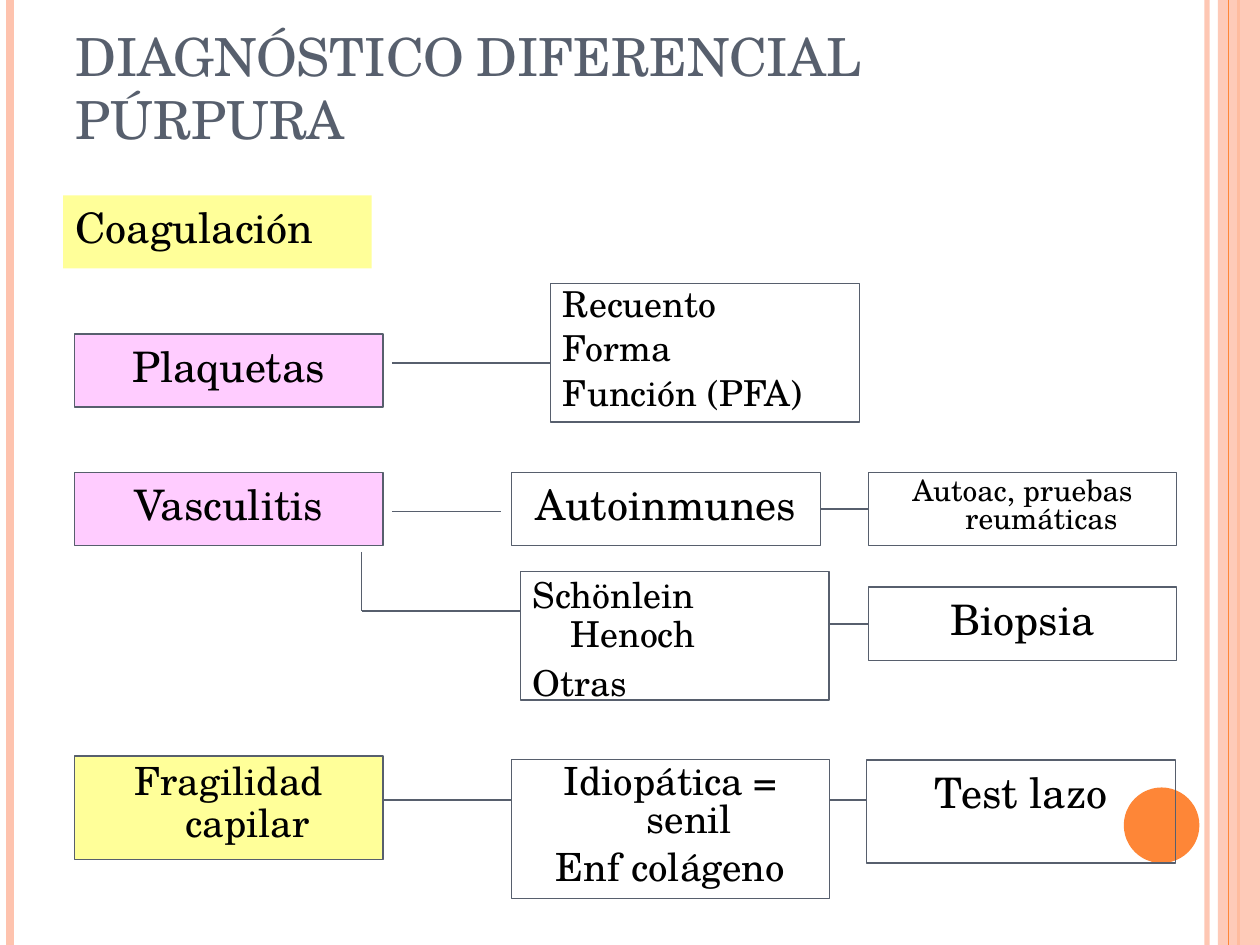
import pptx
import pptx.dml.color
import pptx.enum.shapes
import pptx.enum.text
import pptx.oxml.ns
import pptx.util
from lxml import etree

Pt = pptx.util.Pt
RGBColor = pptx.dml.color.RGBColor
Align = pptx.enum.text.PP_ALIGN
Anchor = pptx.enum.text.MSO_ANCHOR
Shape = pptx.enum.shapes.MSO_SHAPE
qn = pptx.oxml.ns.qn

SLATE = RGBColor(0x57, 0x5F, 0x6D)
BLACK = RGBColor(0, 0, 0)
YELLOW = RGBColor(0xFF, 0xFF, 0x99)
PINK = RGBColor(0xFF, 0xCC, 0xFF)
PEACH = RGBColor(0xFE, 0xC3, 0xAE)
ORANGE = RGBColor(0xFE, 0x86, 0x37)

WIDTH, HEIGHT = 720, 540
BOX_WIDTH, BOX_HEIGHT, TALL_HEIGHT = 176.4, 41.8, 59
LEFT, MIDDLE, RIGHT = 42.5, 292.3, 496.1
VASCULITIS_TOP, FRAGILITY_TOP = 270, 434.2
LEFT_SIDE, RIGHT_SIDE = 1, 3


class Diagram:
    font = "TeX Gyre Schola"
    indent = 21.6
    space_before = 6

    def __init__(self, slide):
        self.slide = slide

    def place(self, shape, left, top, width, height):
        shape.left, shape.top = Pt(left), Pt(top)
        shape.width, shape.height = Pt(width), Pt(height)

    def add_run(self, paragraph, text, size, color):
        run = paragraph.add_run()
        run.text = text
        run.font.name = self.font
        run.font.size = Pt(size)
        run.font.color.rgb = color
        return run

    def set_opacity(self, fill_parent, percent):
        color = fill_parent.find(".//" + qn("a:srgbClr"))
        etree.SubElement(color, qn("a:alpha"), val=str(percent * 1000))

    def add_lines(self, shape, lines, size, align, spacing):
        """Fill a shape with paragraphs that share a hanging indent."""
        frame = shape.text_frame
        frame.word_wrap = True
        frame.auto_size = pptx.enum.text.MSO_AUTO_SIZE.NONE
        frame.vertical_anchor = Anchor.TOP
        for index, text in enumerate(lines):
            paragraph = frame.add_paragraph() if index else frame.paragraphs[0]
            paragraph.alignment = align
            paragraph.line_spacing = spacing
            paragraph.space_before = Pt(self.space_before)
            properties = paragraph._p.get_or_add_pPr()
            properties.set("marL", str(Pt(self.indent)))
            properties.set("indent", str(-Pt(self.indent)))
            etree.SubElement(properties, qn("a:buNone"))
            self.add_run(paragraph, text, size, BLACK)

    def title(self, text, left, top, width, height):
        shape = self.slide.shapes.title
        self.place(shape, left, top, width, height)
        frame = shape.text_frame
        frame.word_wrap = True
        frame.auto_size = pptx.enum.text.MSO_AUTO_SIZE.NONE
        frame.vertical_anchor = Anchor.BOTTOM
        frame.paragraphs[0].alignment = Align.LEFT
        run = self.add_run(frame.paragraphs[0], text, 30, SLATE)
        run._r.get_or_add_rPr().set("cap", "small")

    def body(self, text, left, top):
        shape = self.slide.placeholders[1]
        self.place(shape, left, top, BOX_WIDTH, BOX_HEIGHT)
        shape.fill.solid()
        shape.fill.fore_color.rgb = YELLOW
        self.add_lines(shape, [text], 24, Align.LEFT, 1.0)

    def shape(self, kind, left, top, width, height, fill=None):
        shape = self.slide.shapes.add_shape(
            kind, Pt(left), Pt(top), Pt(width), Pt(height))
        shape.shadow.inherit = False
        shape.line.fill.background()
        if fill is None:
            shape.fill.background()
        else:
            shape.fill.solid()
            shape.fill.fore_color.rgb = fill
        return shape

    def box(self, lines, left, top, width=BOX_WIDTH, height=BOX_HEIGHT,
            fill=None, size=24, align=Align.CENTER, spacing=1.0):
        shape = self.shape(Shape.RECTANGLE, left, top, width, height, fill)
        shape.line.color.rgb = SLATE
        shape.line.width = Pt(0.75)
        self.add_lines(shape, lines, size, align, spacing)
        return shape

    def line(self, x1, y1, x2, y2, color=SLATE, weight=1, start=None, end=None):
        """Draw a line, joined to the side of the start or end box if given."""
        connector = self.slide.shapes.add_connector(
            pptx.enum.shapes.MSO_CONNECTOR.STRAIGHT, Pt(x1), Pt(y1), Pt(x2), Pt(y2))
        connector.line.color.rgb = color
        connector.line.width = Pt(weight)
        etree.SubElement(connector._element.spPr, qn("a:effectLst"))
        if start is not None:
            connector.begin_connect(start, RIGHT_SIDE)
        if end is not None:
            connector.end_connect(end, LEFT_SIDE)
        return connector


def draw_border(diagram):
    pale = diagram.line(689.8, 0, 689.8, HEIGHT, PEACH, 3)
    diagram.set_opacity(pale._element.spPr, 93)
    diagram.line(5.8, 0, 5.8, HEIGHT, PEACH, 4.5)
    diagram.line(707.8, 0, 707.8, HEIGHT, ORANGE, 1.5)
    band = diagram.shape(Shape.RECTANGLE, 696, 0, 24, HEIGHT, PEACH)
    diagram.set_opacity(band._element.spPr, 87)
    diagram.line(702, 0, 702, HEIGHT, ORANGE, 0.75)
    diagram.shape(Shape.OVAL, 642.2, 450, 43.2, 43.2, ORANGE)


def draw_diagnosis(diagram):
    diagram.title("DIAGNÓSTICO DIFERENCIAL PÚRPURA", 36, 20.9, 588.2, 68.4)
    diagram.body("Coagulación", 36, 111.6)

    diagram.box(["Plaquetas"], LEFT, 190.8, fill=PINK)
    diagram.box(["Recuento", "Forma", "Función (PFA)"], 314.6, 162, height=79.2,
                size=20.4, align=Align.LEFT, spacing=0.8)

    diagram.box(["Vasculitis"], LEFT, VASCULITIS_TOP, fill=PINK)
    autoimmune = diagram.box(["Autoinmunes"], MIDDLE, VASCULITIS_TOP)
    antibodies = diagram.box(["Autoac, pruebas reumáticas"], RIGHT, VASCULITIS_TOP,
                             size=16.8, spacing=0.8)
    diagram.box(["Schönlein Henoch", "Otras"], 297.4, 326.7, height=73.4,
                size=20.4, align=Align.LEFT, spacing=0.9)
    biopsy = diagram.box(["Biopsia"], RIGHT, 335.5)

    diagram.box(["Fragilidad capilar"], LEFT, 432, height=TALL_HEIGHT,
                fill=YELLOW, size=22.2, spacing=0.9)
    diagram.box(["Idiopática = senil", "Enf colágeno"], MIDDLE, FRAGILITY_TOP,
                width=181.8, height=79.2, size=22.2, spacing=0.8)
    diagram.box(["Test lazo"], 495.2, FRAGILITY_TOP, height=TALL_HEIGHT)

    diagram.line(224, 207.4, 314.6, 207.4)
    diagram.line(224, 292.3, 286.5, 292.3)
    diagram.line(468.7, 290.9, RIGHT, 290.9, start=autoimmune, end=antibodies)
    diagram.line(473.4, 356.4, RIGHT, 356.4, end=biopsy)
    diagram.line(474.1, 457.2, 495.2, 457.2)
    diagram.line(206.6, 349.2, 297.4, 349.2)
    diagram.line(218.9, 457.2, MIDDLE, 457.2)
    diagram.line(206.6, 315.4, 206.6, 349.2)


def main():
    presentation = pptx.Presentation()
    presentation.slide_width, presentation.slide_height = Pt(WIDTH), Pt(HEIGHT)
    slide = presentation.slides.add_slide(presentation.slide_layouts[1])
    diagram = Diagram(slide)
    draw_border(diagram)
    draw_diagnosis(diagram)
    presentation.save("out.pptx")


if __name__ == "__main__":
    main()
